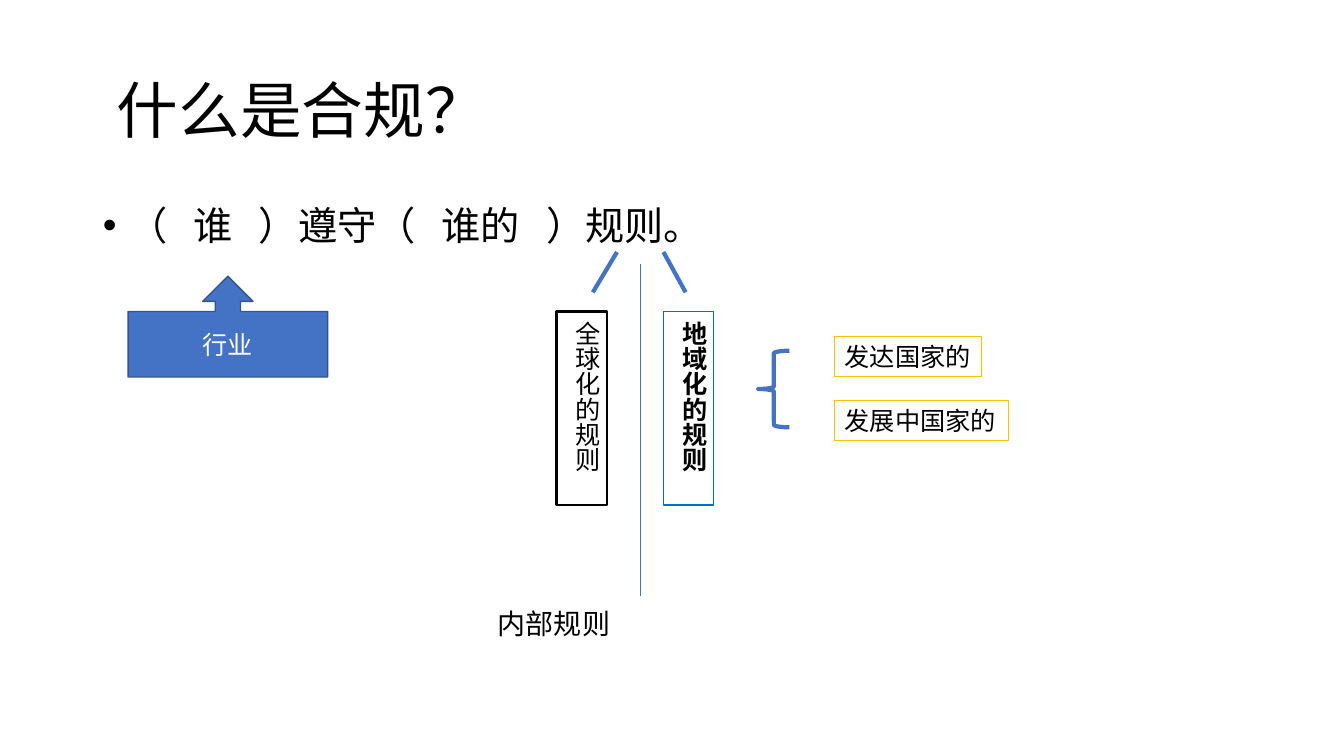
"""Build a slide that explains compliance."""
import pptx
import pptx.dml.color
import pptx.enum.shapes
import pptx.enum.text
import pptx.oxml.ns
import pptx.util
from lxml import etree

Inches = pptx.util.Inches
Pt = pptx.util.Pt
Shapes = pptx.enum.shapes.MSO_SHAPE
Align = pptx.enum.text.PP_ALIGN
Anchor = pptx.enum.text.MSO_ANCHOR
qn = pptx.oxml.ns.qn


def colour(value):
    """Turn a hex string into a colour."""
    return pptx.dml.color.RGBColor.from_string(value)


class Canvas:
    """Hold the style and the current slide."""

    font = "Noto Sans CJK SC"
    black = "000000"
    white = "FFFFFF"
    accent = "4472C4"

    def __init__(self, page):
        """Remember the slide."""
        self.page = page

    def style(self, para, size, ink=black, bold=False, align=Align.LEFT):
        """Format a whole paragraph."""
        para.alignment = align
        para.font.size = Pt(size)
        para.font.bold = bold
        para.font.name = self.font
        para.font.color.rgb = colour(ink)
        defaults = para._p.pPr.find(qn("a:defRPr"))
        etree.SubElement(defaults, qn("a:ea"), typeface=self.font)

    def place(self, box, left, top, width, height):
        """Move and size a placeholder."""
        box.left, box.top = Inches(left), Inches(top)
        box.width, box.height = Inches(width), Inches(height)

    def title(self, text, *area):
        """Fill the title placeholder."""
        box = self.page.shapes.title
        self.place(box, *area)
        frame = box.text_frame
        frame.text = text
        frame.vertical_anchor = Anchor.MIDDLE
        frame.margin_left = Inches(0.24)
        para = frame.paragraphs[0]
        para.line_spacing = 0.9
        self.style(para, 44)

    def bullet(self, words, gap, *area):
        """Fill the body with one bullet whose words stand apart by a gap in points."""
        box = self.page.placeholders[1]
        self.place(box, *area)
        para = box.text_frame.paragraphs[0]
        for index, word in enumerate(words):
            if index:
                space = para.add_run()
                space.text = " "
                space._r.get_or_add_rPr().set("spc", str(gap * 100))
            para.add_run().text = word
        para.line_spacing = 0.9
        para.space_before = Pt(10)
        self.style(para, 28)
        indent = Inches(0.25)
        para._p.pPr.set("marL", str(indent))
        para._p.pPr.set("indent", str(-indent))

    def label(self, text, size, *area):
        """Add a plain text box."""
        box = self.page.shapes.add_textbox(*map(Inches, area))
        box.text_frame.word_wrap = True
        box.text_frame.text = text
        self.style(box.text_frame.paragraphs[0], size)

    def shape(self, kind, area, line, weight, fill=None):
        """Add a preset shape."""
        box = self.page.shapes.add_shape(kind, *map(Inches, area))
        box.shadow.inherit = False
        box.line.color.rgb = colour(line)
        box.line.width = Pt(weight)
        if fill:
            box.fill.solid()
            box.fill.fore_color.rgb = colour(fill)
        else:
            box.fill.background()
        return box

    def framed(self, text, area, line, weight=0.75, bold=False, vertical=False):
        """Add an outlined box with text."""
        frame = self.shape(Shapes.RECTANGLE, area, line, weight).text_frame
        frame.text = text
        frame.word_wrap = vertical
        frame.vertical_anchor = Anchor.TOP
        if vertical:
            frame._txBody.bodyPr.set("vert", "eaVert")
        self.style(frame.paragraphs[0], 18, bold=bold)

    def callout(self, text, *area):
        """Add a filled callout that points up."""
        frame = self.shape(Shapes.UP_ARROW_CALLOUT, area, "325491", 1, self.accent).text_frame
        frame.text = text
        frame.vertical_anchor = Anchor.MIDDLE
        self.style(frame.paragraphs[0], 18, self.white, align=Align.CENTER)

    def line(self, *ends, weight=3):
        """Add a straight line."""
        straight = pptx.enum.shapes.MSO_CONNECTOR.STRAIGHT
        connector = self.page.shapes.add_connector(straight, *map(Inches, ends))
        connector.line.color.rgb = colour(self.accent)
        connector.line.width = Pt(weight)
        etree.SubElement(connector._element.spPr, qn("a:effectLst"))


def main():
    """Build and save the deck."""
    deck = pptx.Presentation()
    deck.slide_width, deck.slide_height = Inches(13.33), Inches(7.5)
    canvas = Canvas(deck.slides.add_slide(deck.slide_layouts[1]))

    canvas.title("什么是合规？", 0.92, 0.4, 11.5, 1.45)
    words = ["（", "谁", "）遵守（", "谁的", "）规则。"]
    canvas.bullet(words, 12.5, 0.92, 2, 11.5, 0.7)
    canvas.label("内部规则", 20, 4.84, 5.97, 1.4, 0.44)

    canvas.framed("全球化的规则", (5.52, 3.09, 0.5, 1.92), canvas.black, 1.5, vertical=True)
    canvas.framed("地域化的规则", (6.58, 3.09, 0.5, 1.92), "0070C0", bold=True, vertical=True)
    canvas.framed("发达国家的", (8.28, 3.34, 1.46, 0.4), "FFC000")
    canvas.framed("发展中国家的", (8.28, 3.97, 1.72, 0.4), "FFC000")

    canvas.shape(Shapes.LEFT_BRACE, (7.52, 3.48, 0.31, 0.76), canvas.accent, 3)
    canvas.line(6.12, 2.5, 5.88, 2.9)
    canvas.line(6.58, 2.5, 6.8, 2.9)
    canvas.callout("行业", 1.27, 2.74, 1.98, 1)
    canvas.line(6.35, 2.62, 6.35, 5.91, weight=0.5)

    deck.save("out.pptx")


if __name__ == "__main__":
    main()
